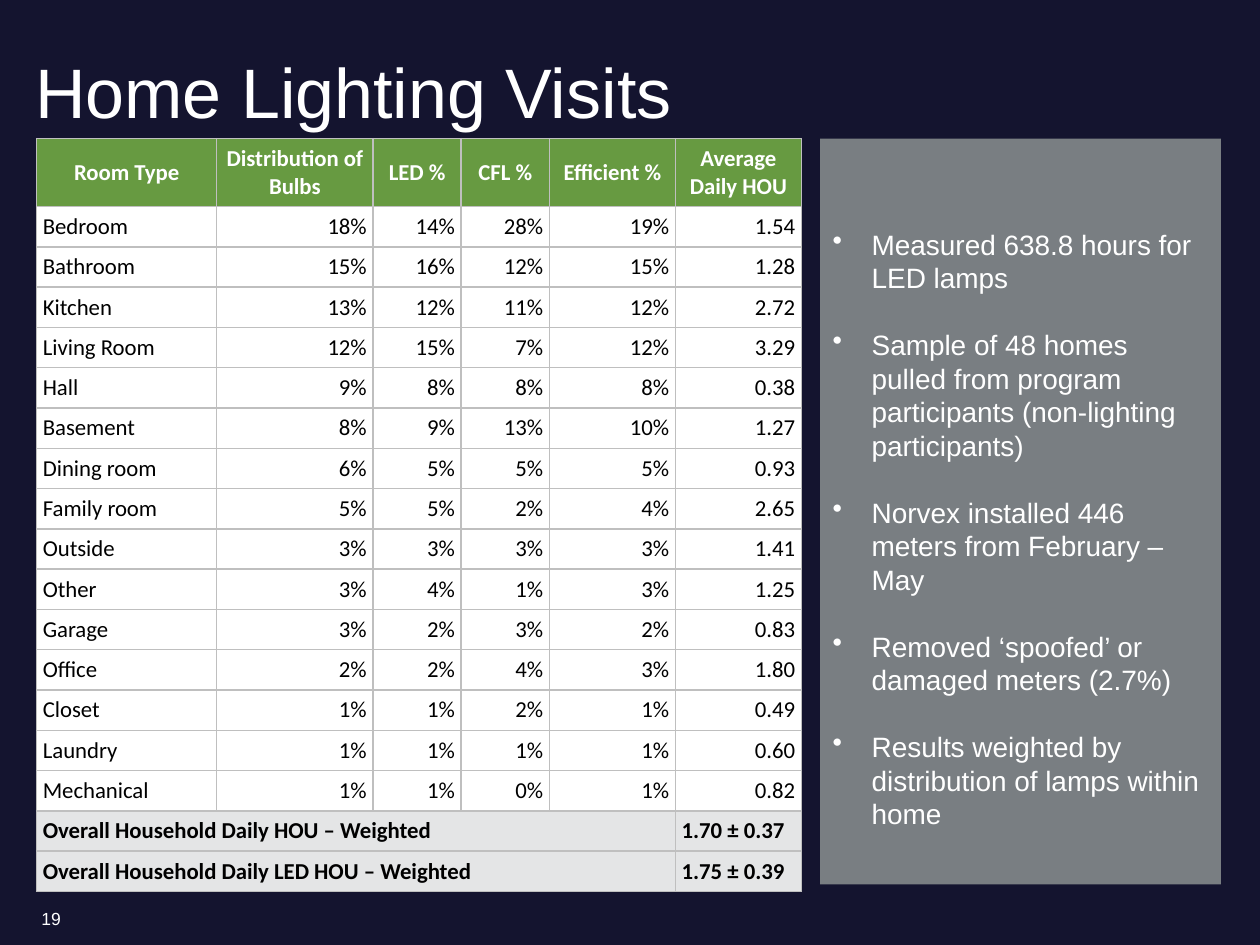
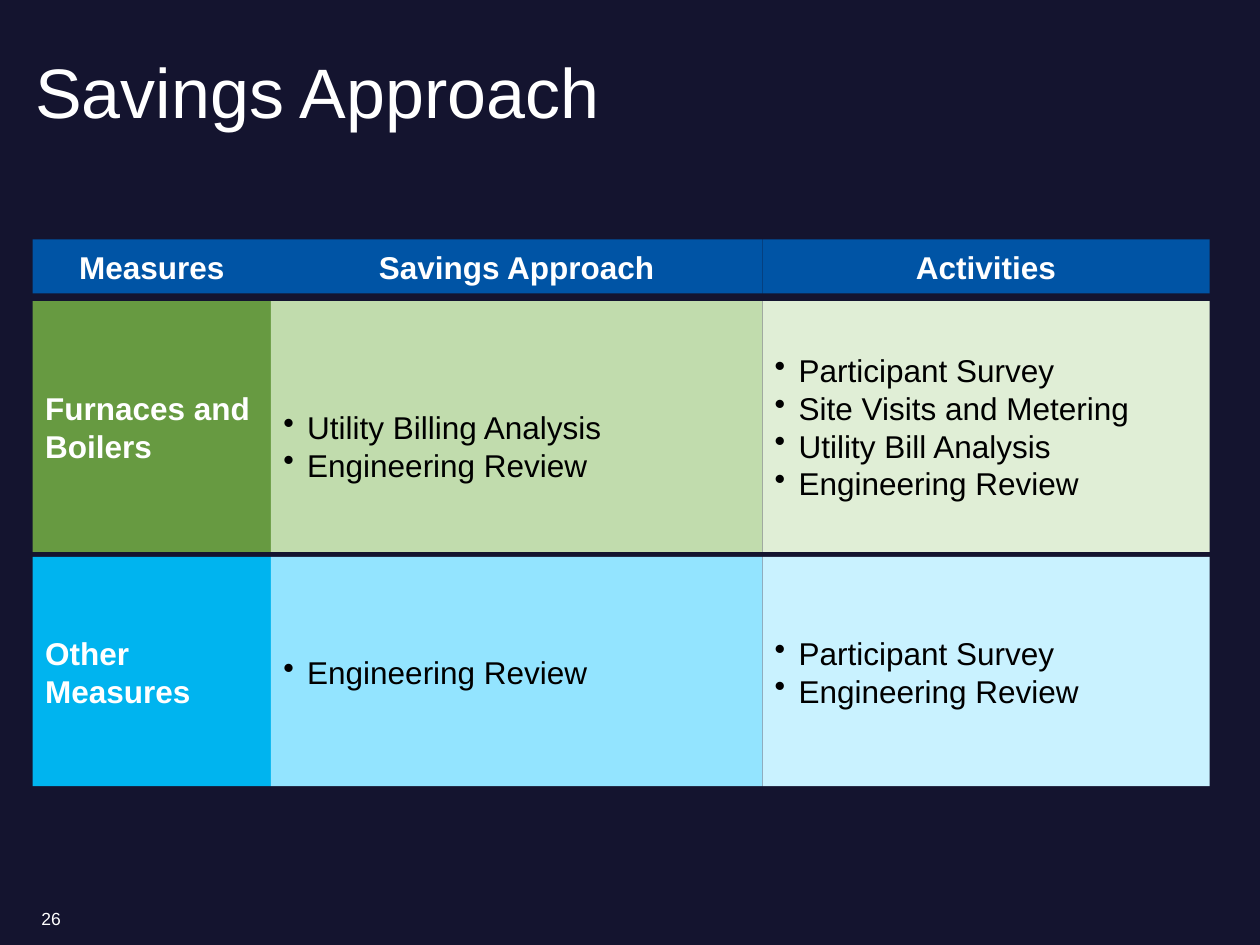
from lxml import etree
from pptx import Presentation
from pptx import util as u
from pptx.dml.color import RGBColor
from pptx.enum import shapes, text
from pptx.oxml import ns

HUES = {
    "night": "14142F", "white": "FFFFFF", "black": "000000",
    "grey": "797E82", "rule": "BFBFBF", "pale": "E4E5E6",
    "blue": "0054A5",
    "green": "679A41", "leaf": "C1DCAD", "mint": "E0EED6",
    "cyan": "00B4EF", "sky": "93E4FF", "ice": "C9F2FF",
}
COLS, ROWS = 100, 75
SIDES = {"l": text.PP_ALIGN.LEFT, "c": text.PP_ALIGN.CENTER, "r": text.PP_ALIGN.RIGHT}

ROOMS = """Bedroom|18%|14%|28%|19%|1.54
Bathroom|15%|16%|12%|15%|1.28
Kitchen|13%|12%|11%|12%|2.72
Living Room|12%|15%|7%|12%|3.29
Hall|9%|8%|8%|8%|0.38
Basement|8%|9%|13%|10%|1.27
Dining room|6%|5%|5%|5%|0.93
Family room|5%|5%|2%|4%|2.65
Outside|3%|3%|3%|3%|1.41
Other|3%|4%|1%|3%|1.25
Garage|3%|2%|3%|2%|0.83
Office|2%|2%|4%|3%|1.80
Closet|1%|1%|2%|1%|0.49
Laundry|1%|1%|1%|1%|0.60
Mechanical|1%|1%|0%|1%|0.82"""
HEADS = ["Room Type", "Distribution of Bulbs", "LED %", "CFL %", "Efficient %", "Average Daily HOU"]
TOTALS = [
    ["Overall Household Daily HOU – Weighted", "", "", "", "", "1.70 ± 0.37"],
    ["Overall Household Daily LED HOU – Weighted", "", "", "", "", "1.75 ± 0.39"],
]
NOTES = [
    "Measured 638.8 hours for LED lamps",
    "Sample of 48 homes pulled from program participants (non-lighting participants)",
    "Norvex installed 446 meters from February – May",
    "Removed ‘spoofed’ or damaged meters (2.7%)",
    "Results weighted by distribution of lamps within home",
]


def hue(name):
    return RGBColor.from_string(HUES[name])


def write(frame, words, size=18, face="Arial", color="white", bold=False,
          side="l", indent=0, gap=0, lead=None):
    lines = [words] if isinstance(words, str) else words
    for i, line in enumerate(lines):
        para = frame.add_paragraph() if i else frame.paragraphs[0]
        para.alignment = SIDES[side]
        if lead:
            para.line_spacing = lead
        if i and gap:
            para.space_before = u.Pt(gap)
        if indent:
            props = para._p.get_or_add_pPr()
            props.set("marL", str(u.Inches(indent)))
            props.set("indent", str(-u.Inches(indent)))
            etree.SubElement(props, ns.qn("a:buChar")).set("char", "•")
        run = para.add_run()
        run.text = line
        font = run.font
        font.size, font.name, font.bold = u.Pt(size), face, bold
        font.color.rgb = hue(color)


def edge(cell, color, width):
    props = cell._tc.get_or_add_tcPr()
    for i, name in enumerate(("lnL", "lnR", "lnT", "lnB")):
        line = etree.Element(ns.qn("a:" + name), w=str(u.Pt(width)))
        fill = etree.SubElement(line, ns.qn("a:solidFill"))
        etree.SubElement(fill, ns.qn("a:srgbClr")).set("val", HUES[color])
        props.insert(i, line)


class Deck:
    def __init__(self):
        self.show = Presentation()
        self.show.slide_width, self.show.slide_height = u.Inches(10), u.Inches(7.5)
        self.page = None

    def across(self, cols):
        return round(self.show.slide_width * cols / COLS)

    def down(self, rows):
        return round(self.show.slide_height * rows / ROWS)

    def place(self, x, y, w, h):
        return self.across(x), self.down(y), self.across(w), self.down(h)

    def start(self, title, number):
        self.page = self.show.slides.add_slide(self.show.slide_layouts[5])
        back = self.page.background.fill
        back.solid()
        back.fore_color.rgb = hue("night")
        head = self.page.shapes.title
        head.left, head.top, head.width, head.height = self.place(2.3, 2.7, 94.4, 7.9)
        frame = head.text_frame
        frame.auto_size = text.MSO_AUTO_SIZE.NONE
        frame.vertical_anchor = text.MSO_ANCHOR.BOTTOM
        frame.margin_left, frame.margin_right = u.Inches(0.05), u.Inches(0.1)
        frame.margin_top = frame.margin_bottom = 0
        write(frame, title, size=40, lead=0.9)
        self.label(number, (2.3, 70.9, 30, 4), size=10)

    def label(self, words, spot, **look):
        frame = self.page.shapes.add_textbox(*self.place(*spot)).text_frame
        frame.word_wrap = True
        frame.vertical_anchor = text.MSO_ANCHOR.MIDDLE
        write(frame, words, **look)

    def block(self, words, spot, fill, drop=0.05, **look):
        box = self.page.shapes.add_shape(shapes.MSO_SHAPE.RECTANGLE, *self.place(*spot))
        box.shadow.inherit = False
        box.fill.solid()
        box.fill.fore_color.rgb = hue(fill)
        box.line.fill.background()
        frame = box.text_frame
        frame.word_wrap = True
        frame.vertical_anchor = text.MSO_ANCHOR.MIDDLE
        frame.margin_top = u.Inches(drop)
        write(frame, words, **look)

    def grid(self, rows, spot, widths, heights, style):
        frame = self.page.shapes.add_table(len(rows), len(widths), *self.place(*spot))
        table = frame.table
        table.first_row = table.horz_banding = False
        for col, width in zip(table.columns, widths):
            col.width = self.across(width)
        for r, (row, height) in enumerate(zip(rows, heights)):
            table.rows[r].height = self.down(height)
            for c, words in enumerate(row):
                cell = table.cell(r, c)
                fill, look = style(r, c)
                cell.fill.solid()
                cell.fill.fore_color.rgb = hue(fill)
                edge(cell, "rule", 1)
                cell.vertical_anchor = text.MSO_ANCHOR.MIDDLE
                cell.margin_left = cell.margin_right = u.Inches(0.05)
                cell.margin_top = cell.margin_bottom = u.Inches(0.05)
                if words:
                    write(cell.text_frame, words, size=13, face="Calibri", **look)
        return table


def visits(deck):
    deck.start("Home Lighting Visits", "19")
    rooms = [line.split("|") for line in ROOMS.splitlines()]
    rows = [HEADS] + rooms + TOTALS
    first = 1 + len(rooms)

    def style(r, c):
        if r == 0:
            return "green", dict(bold=True, side="c")
        if r >= first:
            return "pale", dict(color="black", bold=True)
        return "white", dict(color="black", side="r" if c else "l")

    heights = [5.4] + [3.2] * (len(rows) - 1)
    table = deck.grid(rows, (2.9, 11, 60.7, sum(heights)),
                      [14.3, 12.4, 7, 7, 10, 10], heights, style)
    for r in range(first, len(rows)):
        table.cell(r, 0).merge(table.cell(r, 4))
    deck.block(NOTES, (65.1, 11, 31.8, 59.2), "grey", drop=0.32, size=16, indent=0.31, gap=19)


def savings(deck):
    deck.start("Savings Approach", "26")
    cols = [(2.6, 18.9), (21.5, 39), (60.5, 35.5)]
    for (x, w), head in zip(cols, ["Measures", "Savings Approach", "Activities"]):
        deck.block(head, (x, 19, w, 4.3), "blue", bold=True, side="c")
    bands = [
        (23.9, 19.9, ["green", "leaf", "mint"], [0.05, 0.35, 0.05], [
            "Furnaces and Boilers",
            ["Utility Billing Analysis", "Engineering Review"],
            ["Participant Survey", "Site Visits and Metering",
             "Utility Bill Analysis", "Engineering Review"]]),
        (44.2, 18.2, ["cyan", "sky", "ice"], [0.05] * 3, [
            "Other Measures",
            ["Engineering Review"],
            ["Participant Survey", "Engineering Review"]]),
    ]
    for y, h, fills, drops, cells in bands:
        for (x, w), fill, drop, words in zip(cols, fills, drops, cells):
            if isinstance(words, str):
                look = dict(bold=True)
            else:
                look = dict(color="black", indent=0.19)
            deck.block(words, (x, y, w, h), fill, drop=drop, **look)


def main():
    deck = Deck()
    visits(deck)
    savings(deck)
    deck.show.save("out.pptx")


if __name__ == "__main__":
    main()
